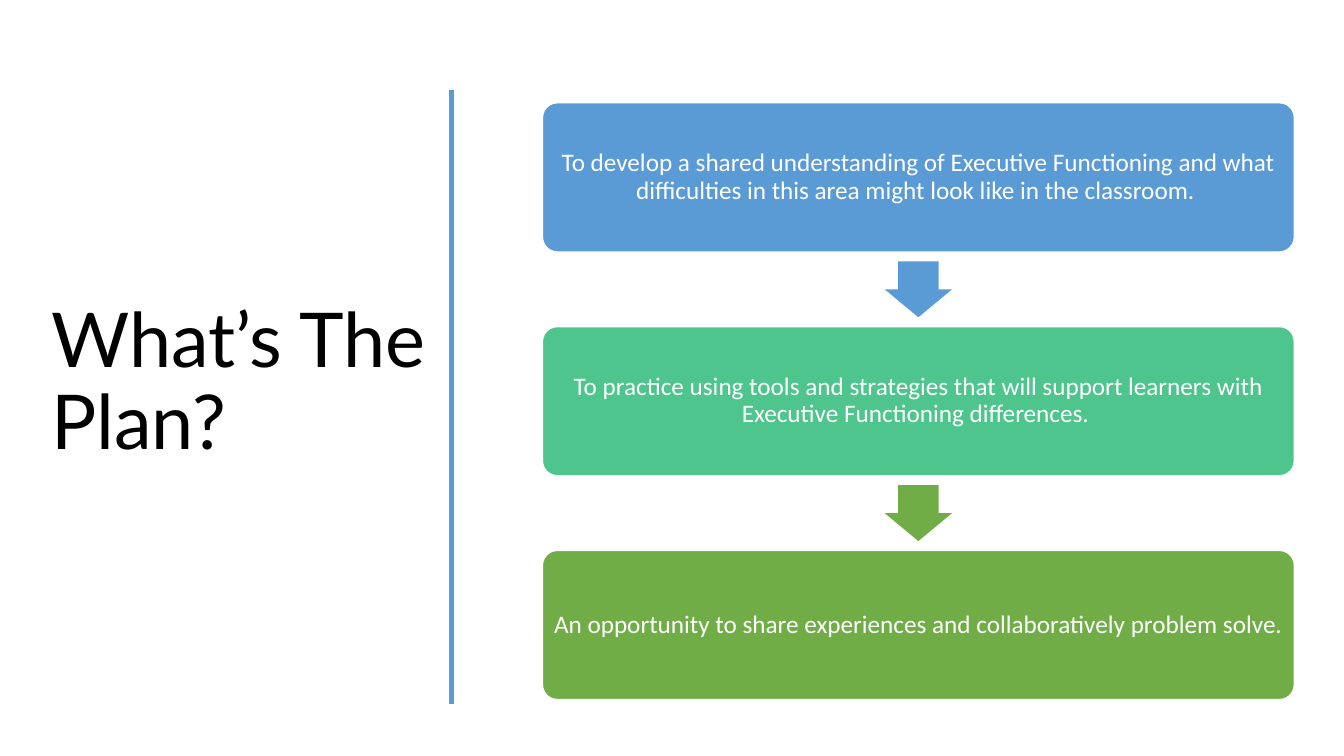
from lxml import etree
from pptx import Presentation
from pptx.dml.color import RGBColor
from pptx.enum.shapes import MSO_CONNECTOR, MSO_SHAPE
from pptx.enum.text import MSO_ANCHOR, PP_ALIGN
from pptx.oxml.ns import qn
from pptx.util import Cm, Pt

STRAIGHT = MSO_CONNECTOR.STRAIGHT
ROUNDED = MSO_SHAPE.ROUNDED_RECTANGLE
DOWN_ARROW = MSO_SHAPE.DOWN_ARROW
MIDDLE = MSO_ANCHOR.MIDDLE
LEFT, CENTER = PP_ALIGN.LEFT, PP_ALIGN.CENTER

TITLE = "What’s The Plan?"
BLUE, GREEN, WHITE, BLACK = "5B9BD5", "70AD47", "FFFFFF", "000000"
GOALS = [
    ("To develop a shared understanding of Executive Functioning and what "
     "difficulties in this area might look like in the classroom. ", BLUE),
    ("To practice using tools and strategies that will support learners with "
     "Executive Functioning differences. ", "4DC58D"),
    ("An opportunity to share experiences and collaboratively problem solve. ", GREEN),
]
ARROW_COLORS = [BLUE, GREEN]

GOAL_LEFT, GOAL_TOP = Cm(13.67), Cm(2.59)
GOAL_WIDTH, GOAL_HEIGHT = Cm(18.95), Cm(3.76)
GOAL_PITCH = Cm(5.64)
ARROW_WIDTH, ARROW_HEIGHT = Cm(1.7), Cm(1.41)
GOAL_INSET = Cm(0.18)
DIVIDER_X = Cm(11.38)


def paint(color_format, hex_color):
    color_format.rgb = RGBColor.from_string(hex_color)


def write(frame, text, font_name, size, hex_color, alignment):
    frame.word_wrap = True
    frame.vertical_anchor = MIDDLE
    paragraph = frame.paragraphs[0]
    paragraph.text = text
    paragraph.alignment = alignment
    paragraph.line_spacing = 0.9
    paragraph.font.name = font_name
    paragraph.font.size = Pt(size)
    paint(paragraph.font.color, hex_color)


def add_filled(slide, kind, left, top, width, height, hex_color, adjustments):
    shape = slide.shapes.add_shape(kind, left, top, width, height)
    shape.shadow.inherit = False
    shape.fill.solid()
    paint(shape.fill.fore_color, hex_color)
    for index, value in enumerate(adjustments):
        shape.adjustments[index] = value
    return shape


def add_goal(slide, top, text, hex_color):
    goal = add_filled(slide, ROUNDED, GOAL_LEFT, top, GOAL_WIDTH, GOAL_HEIGHT,
                      hex_color, [0.1])
    paint(goal.line.color, WHITE)
    goal.line.width = Pt(1)
    frame = goal.text_frame
    frame.margin_left = frame.margin_right = GOAL_INSET
    frame.margin_top = frame.margin_bottom = GOAL_INSET
    write(frame, text, "Calibri", 18, WHITE, CENTER)


def add_arrow(slide, goal_top, hex_color):
    left = GOAL_LEFT + (GOAL_WIDTH - ARROW_WIDTH) // 2
    top = goal_top + (GOAL_HEIGHT + GOAL_PITCH - ARROW_HEIGHT) // 2
    arrow = add_filled(slide, DOWN_ARROW, left, top, ARROW_WIDTH, ARROW_HEIGHT,
                       hex_color, [0.6, 0.5])
    arrow.line.fill.background()


def main():
    presentation = Presentation()
    presentation.slide_width, presentation.slide_height = Cm(33.87), Cm(19.05)
    slide = presentation.slides.add_slide(presentation.slide_layouts[6])

    title = slide.shapes.add_textbox(Cm(1.04), Cm(2.64), Cm(13.34), Cm(14.07))
    write(title.text_frame, TITLE, "Lato", 54, BLACK, LEFT)

    divider = slide.shapes.add_connector(STRAIGHT, DIVIDER_X, Cm(2.26),
                                         DIVIDER_X, Cm(17.75))
    paint(divider.line.color, BLUE)
    divider.line.width = Pt(3)
    etree.SubElement(divider._element.spPr, qn("a:effectLst"))

    goal_tops = [GOAL_TOP + index * GOAL_PITCH for index in range(len(GOALS))]
    for top, (text, hex_color) in zip(goal_tops, GOALS):
        add_goal(slide, top, text, hex_color)
    for top, hex_color in zip(goal_tops, ARROW_COLORS):
        add_arrow(slide, top, hex_color)

    presentation.save("out.pptx")


if __name__ == "__main__":
    main()
